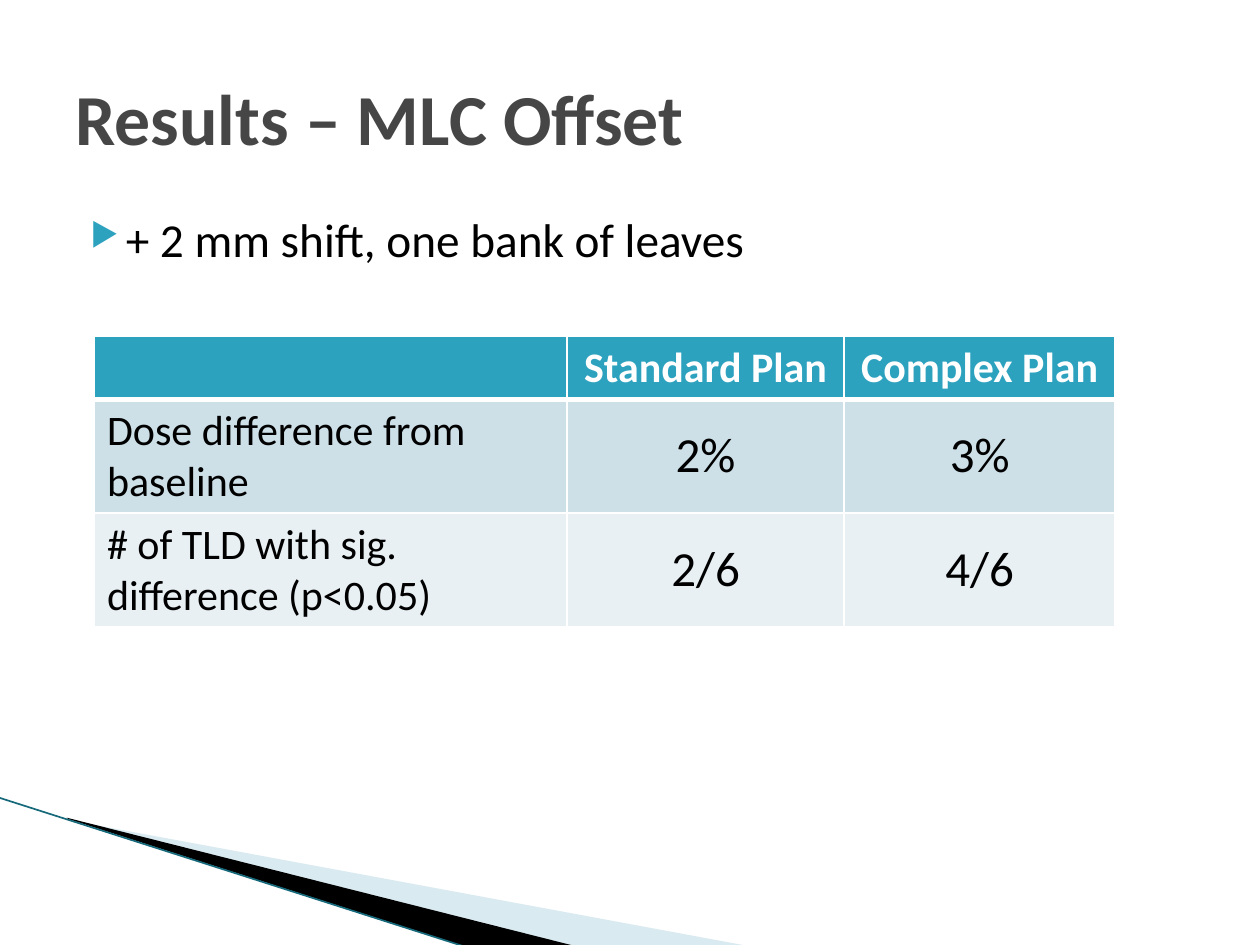
import pptx
import pptx.util
import pptx.dml.color
import pptx.enum.shapes
import pptx.enum.text
import pptx.oxml
import pptx.oxml.ns
from lxml import etree

Inches = pptx.util.Inches
Pt = pptx.util.Pt
RGBColor = pptx.dml.color.RGBColor
qn = pptx.oxml.ns.qn
ANCHOR = pptx.enum.text.MSO_ANCHOR
ALIGN = pptx.enum.text.PP_ALIGN

TEAL = RGBColor(0x2D, 0xA2, 0xBF)
DARK_TEAL = RGBColor(0x16, 0x69, 0x7A)
PALE_BLUE = RGBColor(0xA0, 0xCB, 0xDC)
BAND_1 = RGBColor(0xCD, 0xE0, 0xE8)
BAND_2 = RGBColor(0xE8, 0xF0, 0xF4)
GREY = RGBColor(0x46, 0x46, 0x46)
BLACK = RGBColor(0, 0, 0)
WHITE = RGBColor(0xFF, 0xFF, 0xFF)


def add_run(p, text, size, color, bold=False):
    r = p.add_run()
    r.text = text
    r.font.name = "Calibri"
    r.font.size = Pt(size)
    r.font.bold = bold
    r.font.color.rgb = color


def set_borders(cell, widths):
    tcPr = cell._tc.get_or_add_tcPr()
    for i, (side, width) in enumerate(widths.items()):
        ln = etree.Element(qn("a:" + side), w=str(Pt(width)))
        fill = etree.SubElement(ln, qn("a:solidFill"))
        etree.SubElement(fill, qn("a:srgbClr"), val=str(WHITE))
        tcPr.insert(i, ln)


prs = pptx.Presentation()
prs.slide_width = Inches(10)
prs.slide_height = Inches(7.5)
s = prs.slides.add_slide(prs.slide_layouts[6])

wedges = [
    ([(0.55, 6.51), (5.95, 7.51), (4.56, 7.51), (0.55, 6.5)], PALE_BLUE, 40),
    ([(0.53, 6.49), (4.57, 7.51), (3.72, 7.52), (0.54, 6.5)], BLACK, 100),
]
for points, color, opacity in wedges:
    points = [(Inches(x), Inches(y)) for x, y in points]
    fb = s.shapes.build_freeform(*points[0])
    fb.add_line_segments(points[1:], close=True)
    sp = fb.convert_to_shape()
    sp.shadow.inherit = False
    sp.fill.solid()
    sp.fill.fore_color.rgb = color
    sp.line.fill.background()
    if opacity < 100:
        clr = sp._element.spPr.find(qn("a:solidFill")).find(qn("a:srgbClr"))
        etree.SubElement(clr, qn("a:alpha"), val=str(opacity * 1000))

edge = s.shapes.add_connector(
    pptx.enum.shapes.MSO_CONNECTOR.STRAIGHT,
    Inches(-0.01), Inches(6.33), Inches(3.71), Inches(7.52))
edge.line.color.rgb = DARK_TEAL
edge.line.width = Pt(0.95)
etree.SubElement(edge._element.spPr, qn("a:effectLst"))

sp = s.shapes.add_textbox(Inches(0.5), Inches(1.62), Inches(9), Inches(4.95))
tf = sp.text_frame
tf.word_wrap = True
p = tf.paragraphs[0]
pPr = p._p.get_or_add_pPr()
pPr.set("marL", str(Inches(0.4)))
pPr.set("indent", str(Inches(-0.28)))
bu = etree.SubElement(pPr, qn("a:buClr"))
etree.SubElement(bu, qn("a:srgbClr"), val=str(TEAL))
etree.SubElement(pPr, qn("a:buSzPct"), val="68000")
etree.SubElement(pPr, qn("a:buChar"), char="▶")
add_run(p, "+ 2 mm shift, one bank of leaves", 27, BLACK)

sp = s.shapes.add_textbox(Inches(0.5), Inches(0.3), Inches(9), Inches(1.25))
tf = sp.text_frame
tf.word_wrap = True
tf.vertical_anchor = ANCHOR.MIDDLE
add_run(tf.paragraphs[0], "Results – MLC Offset", 41, GREY, True)

rows = [
    ("", "Standard Plan", "Complex Plan"),
    ("Dose difference from baseline", "2%", "3%"),
    ("# of TLD with sig. difference (p<0.05)", "2/6", "4/6"),
]
fills = [TEAL, BAND_1, BAND_2]
table = s.shapes.add_table(
    3, 3, Inches(0.75), Inches(2.67), Inches(8.1), Inches(2.3)).table
for col, width in zip(table.columns, (3.75, 2.2, 2.15)):
    col.width = Inches(width)
for row, height in zip(table.rows, (0.5, 0.9, 0.9)):
    row.height = Inches(height)

for i, texts in enumerate(rows):
    for j, text in enumerate(texts):
        cell = table.cell(i, j)
        cell.fill.solid()
        cell.fill.fore_color.rgb = fills[i]
        set_borders(cell, {"lnL": 1, "lnR": 1, "lnT": 3 if i == 1 else 1,
                           "lnB": 3 if i == 0 else 1})
        p = cell.text_frame.paragraphs[0]
        if j > 0:
            p.alignment = ALIGN.CENTER
        if i > 0 and j > 0:
            cell.vertical_anchor = ANCHOR.MIDDLE
        if text:
            add_run(p, text, 28 if i > 0 and j > 0 else 24,
                    WHITE if i == 0 else BLACK, i == 0)

prs.save("out.pptx")
